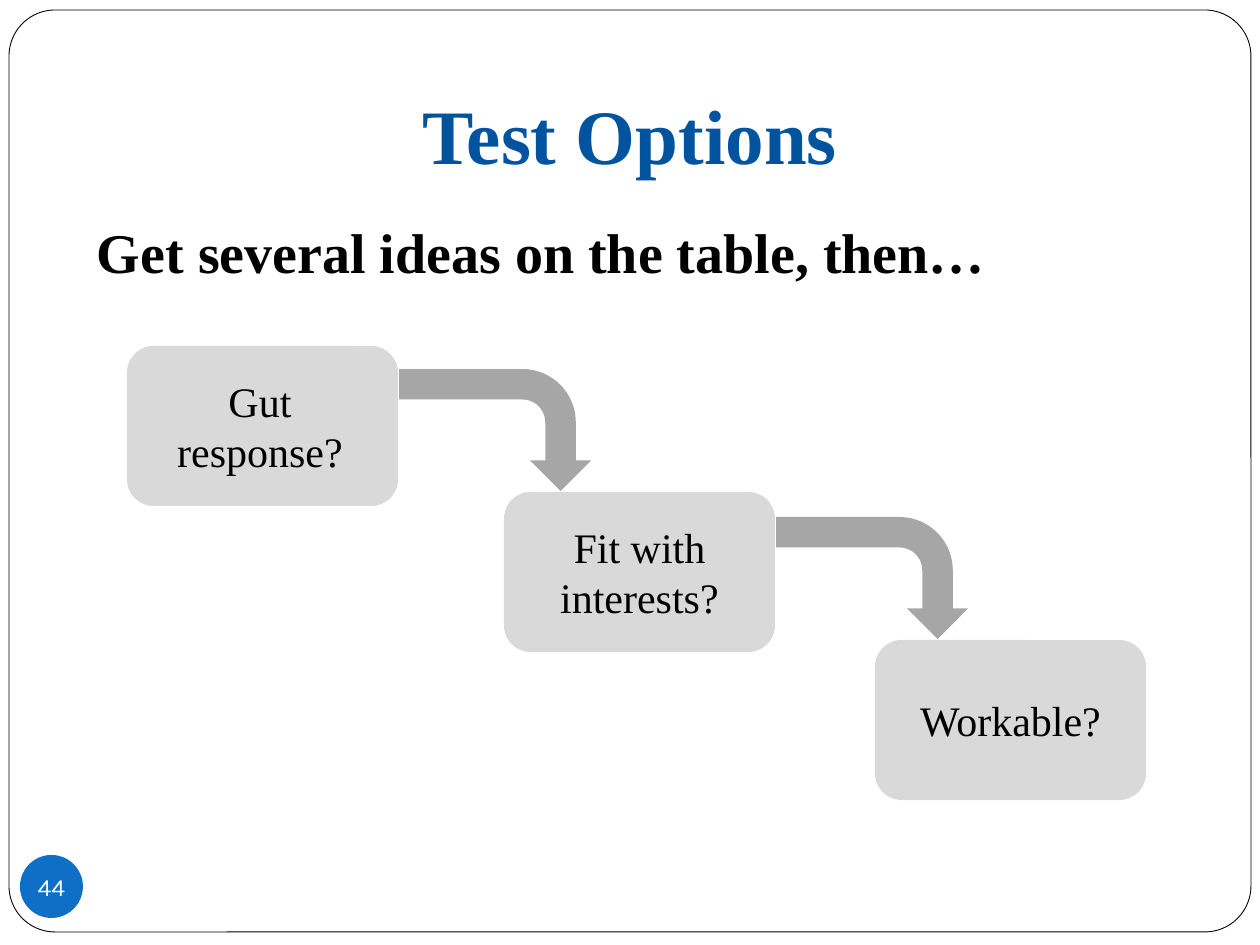
from dataclasses import dataclass
from pptx import Presentation
from pptx.dml.color import RGBColor
from pptx.enum.shapes import MSO_SHAPE as Kind
from pptx.enum.text import MSO_ANCHOR as Anchor, PP_ALIGN as Align
from pptx.util import Emu, Pt

DPI = 126


@dataclass(frozen=True)
class Theme:
    white: str = "FFFFFF"
    black: str = "000000"
    title: str = "00549F"
    step: str = "D9D9D9"
    arrow: str = "A6A6A6"
    badge: str = "0F6FC6"
    serif: str = "Times New Roman"
    sans: str = "Karla"
    head: int = 44
    lead: int = 32
    body: int = 24
    small: int = 14


@dataclass(frozen=True)
class Box:
    x: int
    y: int
    w: int
    h: int


@dataclass(frozen=True)
class Step:
    label: str
    box: Box
    left: int = 23  # text inset on the left


T = Theme()
STEP_W, STEP_H = 271, 160
STEPS = [
    Step("Gut response?", Box(127, 346, STEP_W, STEP_H), left=18),
    Step("Fit with interests?", Box(504, 492, STEP_W, STEP_H)),
    Step("Workable?", Box(875, 640, STEP_W, STEP_H)),
]


def px(n: float) -> Emu:
    return Emu(round(n * 914400 / DPI))


def place(box: Box) -> list[Emu]:
    return [px(n) for n in (box.x, box.y, box.w, box.h)]


def write(shape, text: str, *, size: int, color: str = T.black, font: str = T.serif,
          bold: bool = False, align=Align.CENTER, anchor=Anchor.MIDDLE,
          inset: tuple[int, int, int, int] = (13, 6, 13, 6), wrap: bool = True) -> None:
    frame = shape.text_frame
    frame.word_wrap = wrap
    frame.vertical_anchor = anchor
    left, top, right, bottom = map(px, inset)
    frame.margin_left, frame.margin_right = left, right
    frame.margin_top, frame.margin_bottom = top, bottom
    para = frame.paragraphs[0]
    para.alignment = align
    run = para.add_run()
    run.text = text
    run.font.name, run.font.size, run.font.bold = font, Pt(size), bold
    run.font.color.rgb = RGBColor.from_string(color)


def draw(slide, kind, box: Box, fill: str):
    shape = slide.shapes.add_shape(kind, *place(box))
    shape.shadow.inherit = False
    shape.fill.solid()
    shape.fill.fore_color.rgb = RGBColor.from_string(fill)
    shape.line.fill.background()
    return shape


def label(slide, box: Box, text: str, **style) -> None:
    write(slide.shapes.add_textbox(*place(box)), text, **style)


def bend(slide, start: Box, end: Box) -> None:
    """Arrow from the right side of one step down to the top of the next."""
    wide, tall = 122, 192  # size before the quarter turn
    mid_x = start.x + start.w + 1 + tall // 2
    mid_y = end.y - 1 - wide // 2
    box = Box(mid_x - wide // 2, mid_y - tall // 2, wide, tall)
    draw(slide, Kind.BENT_ARROW, box, T.arrow).rotation = 90


def main() -> None:
    deck = Presentation()
    deck.slide_width, deck.slide_height = px(1260), px(945)
    slide = deck.slides.add_slide(deck.slide_layouts[6])

    # Rounded frame
    frame = draw(slide, Kind.ROUNDED_RECTANGLE, Box(9, 10, 1242, 922), T.white)
    frame.adjustments[0] = 0.05
    frame.line.color.rgb = RGBColor.from_string(T.black)
    frame.line.width = Pt(0.5)

    # Title and lead line
    label(slide, Box(127, 82, 1006, 106), "Test Options", size=T.head,
          color=T.title, bold=True, anchor=Anchor.TOP)
    label(slide, Box(84, 204, 1102, 94), "Get several ideas on the table, then…",
          size=T.lead, bold=True, align=Align.LEFT)

    # Steps and the arrows between them
    for step in STEPS:
        shape = draw(slide, Kind.ROUNDED_RECTANGLE, step.box, T.step)
        write(shape, step.label, size=T.body, inset=(step.left, 6, 23, 6))
    for first, then in zip(STEPS, STEPS[1:]):
        bend(slide, first.box, then.box)

    # Page badge
    badge = draw(slide, Kind.OVAL, Box(20, 855, 63, 63), T.badge)
    write(badge, "44", size=T.small, color=T.white, font=T.sans,
          inset=(0, 0, 0, 0), wrap=False)

    deck.save("out.pptx")


if __name__ == "__main__":
    main()
